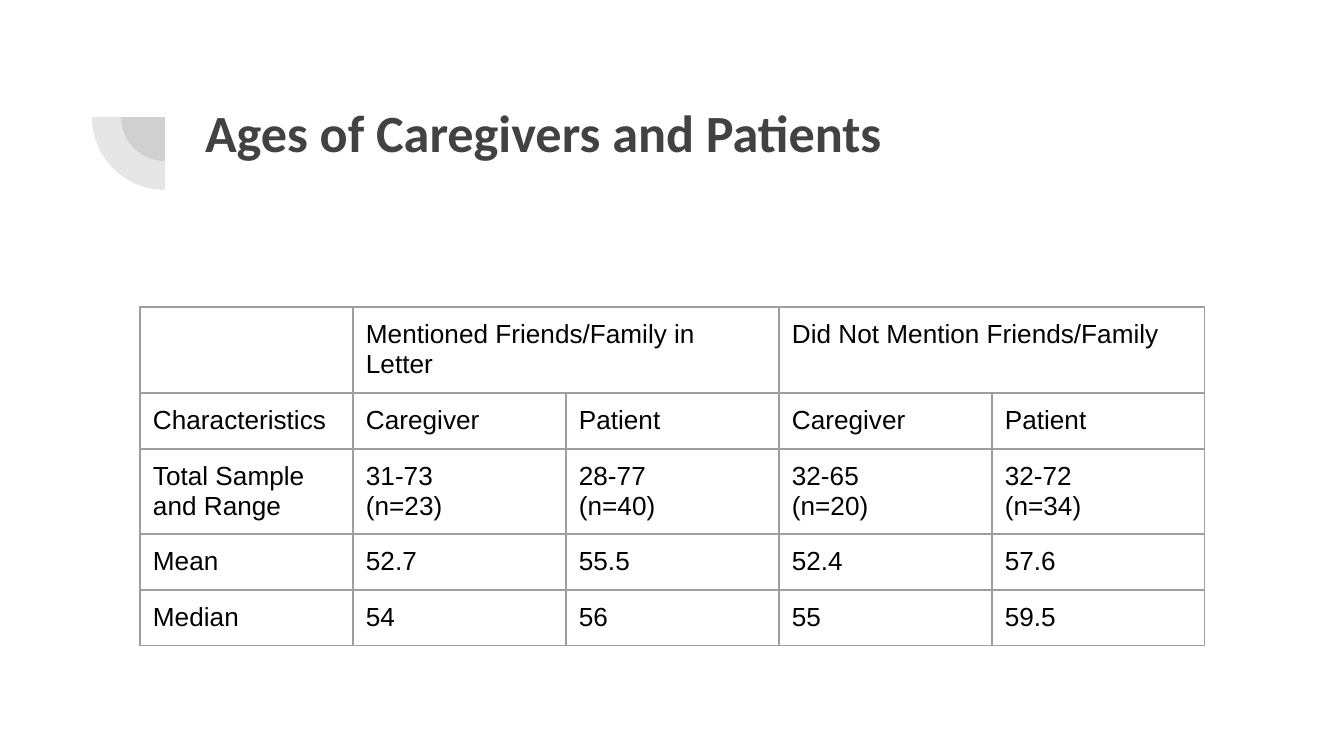
"""Build the slide on the ages of caregivers and patients."""
from dataclasses import dataclass

from lxml import etree
from pptx import Presentation
from pptx.dml.color import RGBColor
from pptx.enum.shapes import MSO_SHAPE
from pptx.enum.text import MSO_ANCHOR, MSO_AUTO_SIZE, PP_ALIGN
from pptx.oxml.ns import qn
from pptx.slide import Slide
from pptx.table import Table, _Cell
from pptx.util import Emu, Pt

PIE = MSO_SHAPE.PIE
TOP = MSO_ANCHOR.TOP
LEFT = PP_ALIGN.LEFT
NO_AUTOFIT = MSO_AUTO_SIZE.NONE

EMU_PER_PX = 914400 / 134.4
SLIDE_WIDTH, SLIDE_HEIGHT = 1344, 756
INSET = 13
COLUMN_WIDTH = 213
ROW_HEIGHTS = (86, 56, 85, 56, 56)
BORDER_WIDTH = Pt(0.75)
COLORS = {"dark": "424242", "text": "000000", "border": "9E9E9E"}

AGES = (
    ("", "Mentioned Friends/Family in Letter", "", "Did Not Mention Friends/Family", ""),
    ("Characteristics", "Caregiver", "Patient", "Caregiver", "Patient"),
    ("Total Sample and Range", "31-73\n(n=23)", "28-77\n(n=40)", "32-65\n(n=20)", "32-72\n(n=34)"),
    ("Mean", "52.7", "55.5", "52.4", "57.6"),
    ("Median", "54", "56", "55", "59.5"),
)


@dataclass(frozen=True)
class QuarterDisc:
    center_x: int
    center_y: int
    radius: int


QUARTER_DISCS = (QuarterDisc(165, 117, 44), QuarterDisc(165, 117, 73))


def px(length: int) -> Emu:
    return Emu(round(length * EMU_PER_PX))


def color(name: str) -> RGBColor:
    return RGBColor.from_string(COLORS[name])


def draw_quarter_disc(slide: Slide, disc: QuarterDisc) -> None:
    quarter = slide.shapes.add_shape(
        PIE,
        px(disc.center_x - disc.radius),
        px(disc.center_y - disc.radius),
        px(2 * disc.radius),
        px(2 * disc.radius),
    )
    quarter.adjustments[0] = 108
    quarter.adjustments[1] = 162
    quarter.rotation = 270
    quarter.shadow.inherit = False
    quarter.line.fill.background()
    quarter.fill.solid()
    quarter.fill.fore_color.rgb = color("dark")
    tint = quarter.fill._xPr.find(".//" + qn("a:srgbClr"))
    etree.SubElement(tint, qn("a:alpha"), val="13000")


def draw_title(slide: Slide, wording: str) -> None:
    title = slide.shapes.title
    title.left, title.top, title.width, title.height = px(192), px(87), px(1034), px(147)
    frame = title.text_frame
    frame.text = wording
    frame.auto_size = NO_AUTOFIT
    frame.word_wrap = True
    frame.vertical_anchor = TOP
    frame.margin_left = frame.margin_right = frame.margin_top = frame.margin_bottom = px(INSET)
    heading = frame.paragraphs[0]
    heading.alignment = LEFT
    heading.line_spacing = 1.0
    heading.font.name = "Calibri"
    heading.font.size = Pt(28)
    heading.font.bold = True
    heading.font.color.rgb = color("dark")


def add_borders(cell: _Cell) -> None:
    properties = cell._tc.get_or_add_tcPr()
    for position, side in enumerate(("a:lnL", "a:lnR", "a:lnT", "a:lnB")):
        border = etree.Element(qn(side), w=str(BORDER_WIDTH))
        fill = etree.SubElement(border, qn("a:solidFill"))
        etree.SubElement(fill, qn("a:srgbClr"), val=COLORS["border"])
        properties.insert(position, border)


def fill_cell(cell: _Cell, wording: str) -> None:
    cell.text = wording
    cell.margin_left = cell.margin_right = cell.margin_top = cell.margin_bottom = px(INSET)
    cell.vertical_anchor = TOP
    cell.fill.background()
    add_borders(cell)
    for paragraph in cell.text_frame.paragraphs:
        paragraph.font.name = "Arial"
        paragraph.font.size = Pt(14)
        paragraph.font.color.rgb = color("text")


def draw_ages(slide: Slide) -> None:
    column_count = len(AGES[0])
    ages: Table = slide.shapes.add_table(
        len(AGES),
        column_count,
        px(140),
        px(307),
        px(COLUMN_WIDTH * column_count),
        px(sum(ROW_HEIGHTS)),
    ).table
    ages.first_row = ages.horz_banding = False
    for column in ages.columns:
        column.width = px(COLUMN_WIDTH)
    for row, height in zip(ages.rows, ROW_HEIGHTS):
        row.height = px(height)
    for row, wordings in zip(ages.rows, AGES):
        for cell, wording in zip(row.cells, wordings):
            fill_cell(cell, wording)
    for first in (1, 3):
        ages.cell(0, first).merge(ages.cell(0, first + 1))


def main() -> None:
    deck = Presentation()
    deck.slide_width, deck.slide_height = px(SLIDE_WIDTH), px(SLIDE_HEIGHT)
    slide = deck.slides.add_slide(deck.slide_layouts[5])
    for disc in QUARTER_DISCS:
        draw_quarter_disc(slide, disc)
    draw_title(slide, "Ages of Caregivers and Patients")
    draw_ages(slide)
    deck.save("out.pptx")


if __name__ == "__main__":
    main()
